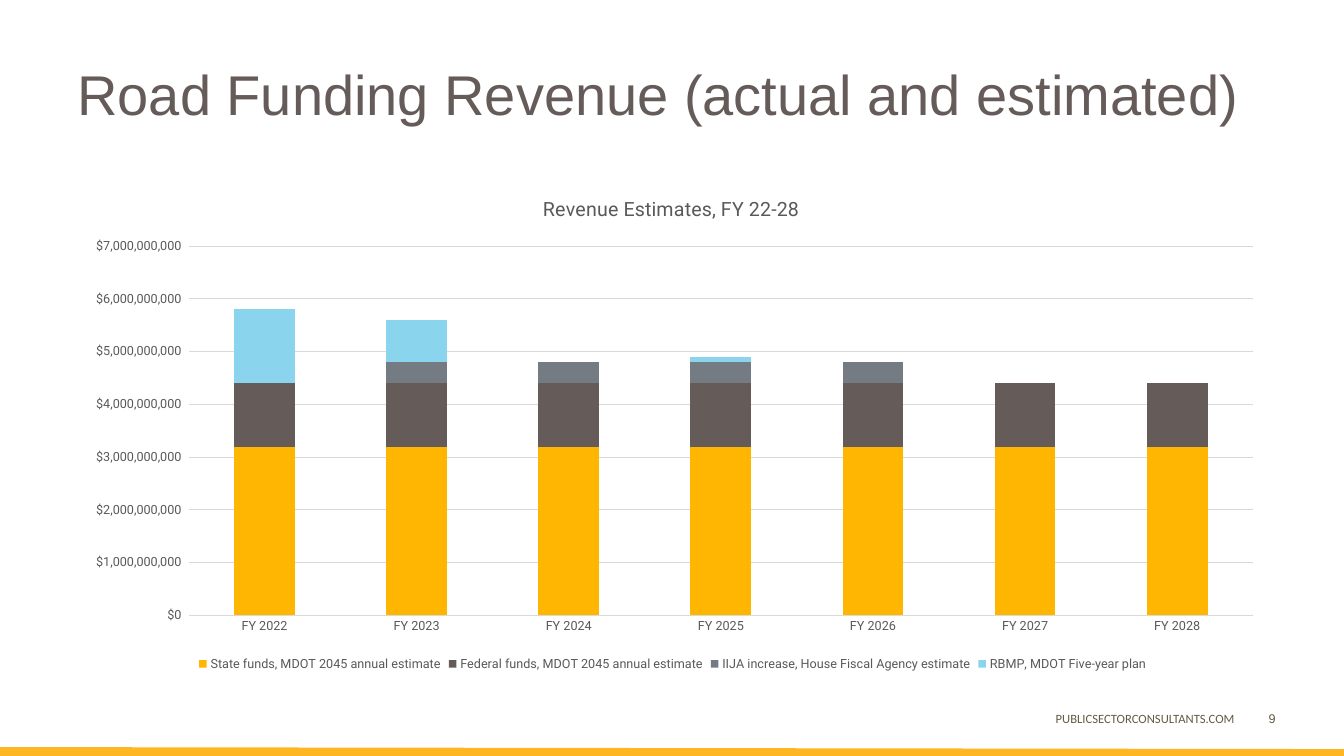
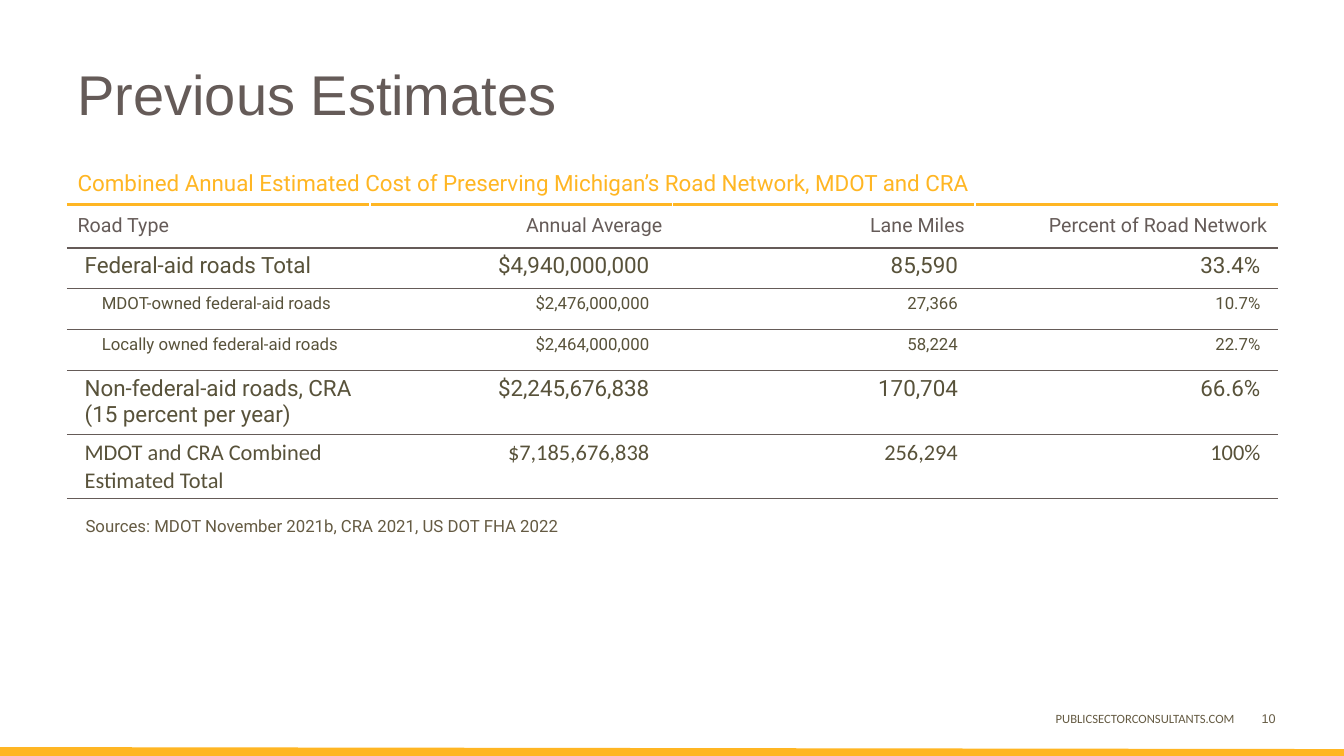
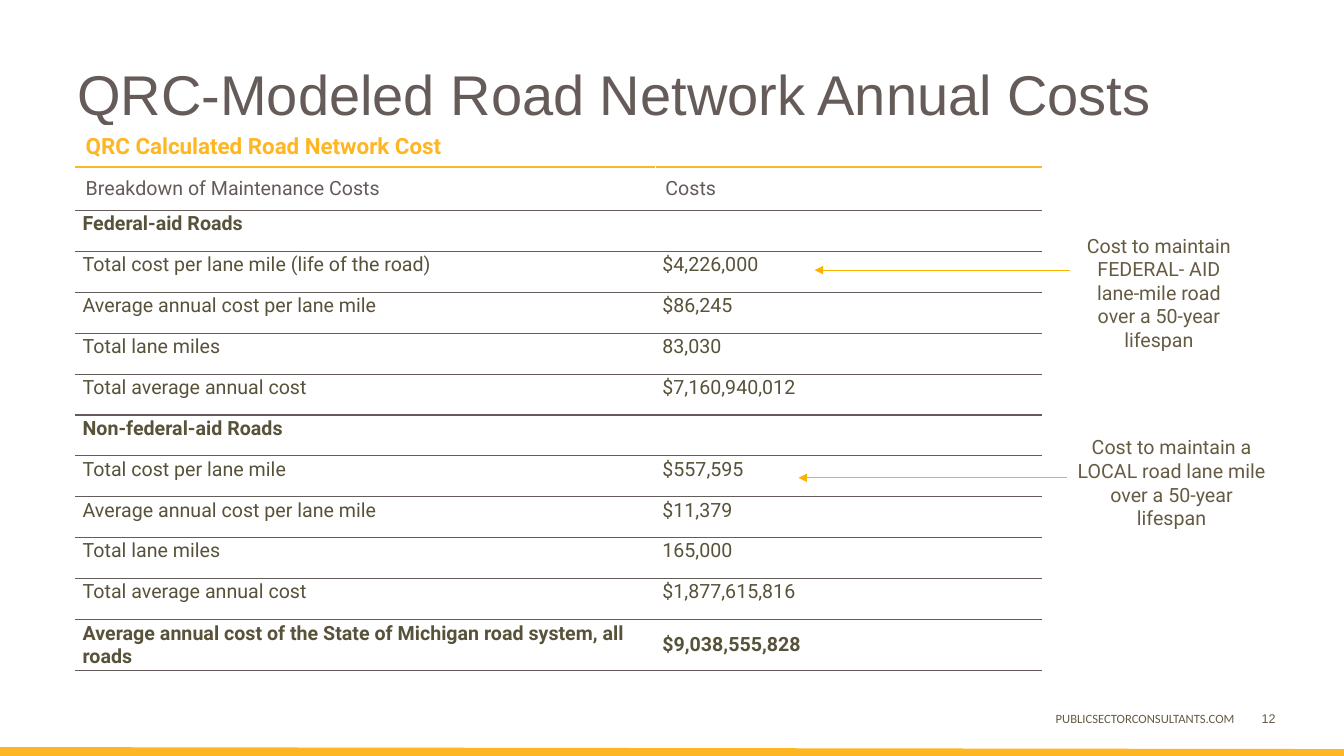
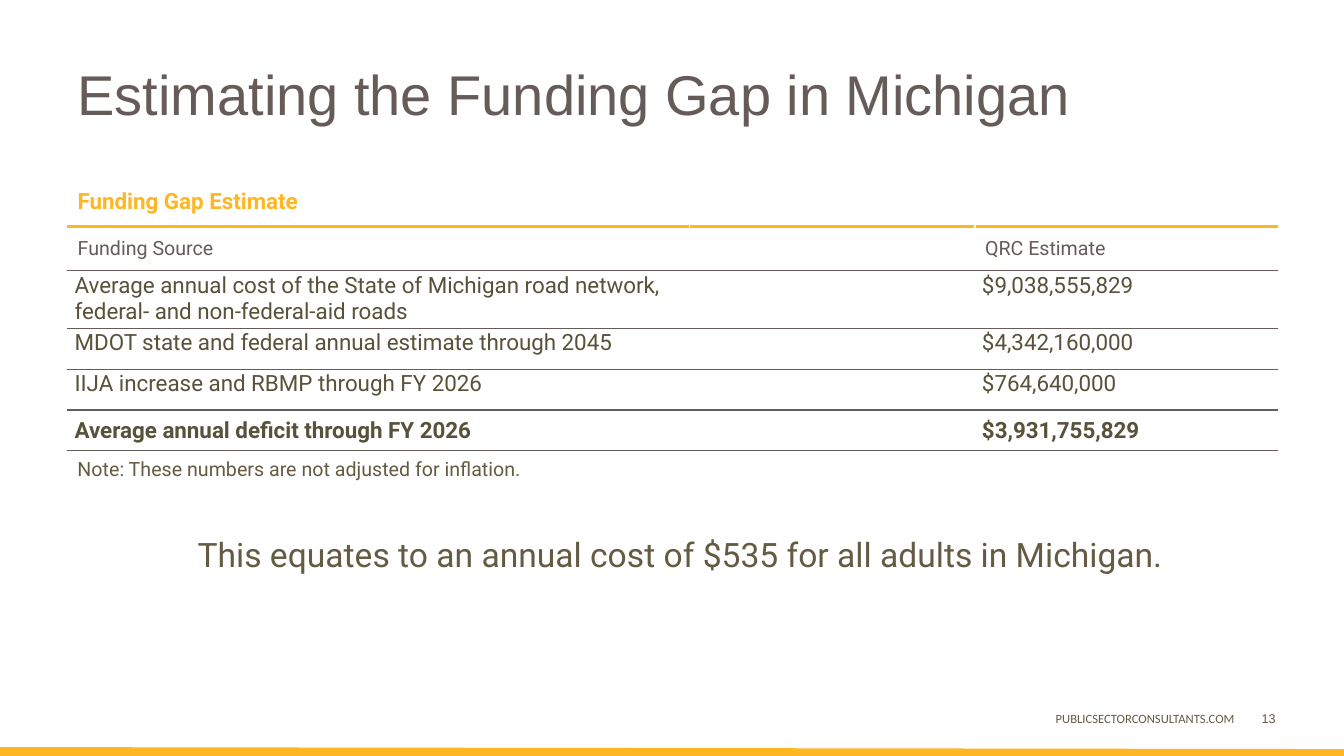
from dataclasses import dataclass

from lxml.etree import SubElement
from pptx import Presentation
from pptx.chart.data import CategoryChartData
from pptx.dml.color import RGBColor
from pptx.enum.chart import XL_CHART_TYPE, XL_LEGEND_POSITION, XL_TICK_MARK
from pptx.enum.shapes import MSO_CONNECTOR
from pptx.enum.text import MSO_ANCHOR, PP_ALIGN
from pptx.oxml.ns import qn
from pptx.util import Inches, Pt


@dataclass(frozen=True)
class Theme:
    gold: str = "FFB623"
    arrow: str = "FBB300"
    gray: str = "655B58"
    olive: str = "655B43"
    body: str = "58523A"
    white: str = "FFFFFF"
    chart_text: str = "595959"
    grid: str = "D9D9D9"
    series: tuple = ("FFB602", "655B58", "757B83", "8BD4EE")
    title_font: str = "Arial"
    text_font: str = "Roboto"
    footer_font: str = "Calibri"
    title: int = 40
    statement: int = 24
    large: int = 16
    normal: int = 14
    small: int = 12
    tiny: int = 9


THEME = Theme()


@dataclass(frozen=True)
class RowStyle:
    size: int = THEME.normal
    bold: bool = False
    font: str = THEME.text_font
    indent: float = 0
    anchor: MSO_ANCHOR = MSO_ANCHOR.TOP


PLAIN = RowStyle()
SECTION = RowStyle(bold=True)
GRAND_TOTAL = RowStyle(bold=True, anchor=MSO_ANCHOR.MIDDLE)
LARGE = RowStyle(size=THEME.large)
LARGE_TOTAL = RowStyle(size=THEME.large, bold=True, anchor=MSO_ANCHOR.MIDDLE)
DETAIL = RowStyle(size=THEME.small, indent=0.17)
COMBINED = RowStyle(size=THEME.large, font=THEME.footer_font)

FOOTER = "PUBLICSECTORCONSULTANTS.COM"
ROW_HEIGHT = 4.87 / 12

REVENUE = {
    "title": "Revenue Estimates, FY 22-28",
    "years": [f"FY {year}" for year in range(2022, 2029)],
    "billions": {
        "State funds, MDOT 2045 annual estimate": [3.2] * 7,
        "Federal funds, MDOT 2045 annual estimate": [1.2] * 7,
        "IIJA increase, House Fiscal Agency estimate": [0, 0.4, 0.4, 0.4, 0.4, 0, 0],
        "RBMP, MDOT Five-year plan": [1.4, 0.8, 0, 0.1, 0, 0, 0],
    },
}

PREVIOUS_ESTIMATES = {
    "caption": "Combined Annual Estimated Cost of Preserving Michigan’s Road Network, MDOT and CRA",
    "caption_bold": False,
    "caption_height": ROW_HEIGHT,
    "position": (0.67, 1.62),
    "columns": [3, 3, 3, 3],
    "margins": (0.17, 0.05),
    "right_padding": {1: 0.06},
    "numbers": PP_ALIGN.RIGHT,
    "header": ["Road Type", "Annual Average", "Lane Miles", "Percent of Road Network"],
    "rows": [
        (LARGE, ["Federal-aid roads Total", "$4,940,000,000", "85,590", "33.4%"]),
        (DETAIL, ["MDOT-owned federal-aid roads", "$2,476,000,000", "27,366", "10.7%"]),
        (DETAIL, ["Locally owned federal-aid roads", "$2,464,000,000", "58,224", "22.7%"]),
        (LARGE, ["Non-federal-aid roads, CRA (15 percent per year)",
                 "$2,245,676,838", "170,704", "66.6%"]),
        (COMBINED, ["MDOT and CRA Combined Estimated Total",
                    "$7,185,676,838", "256,294", "100%"]),
    ],
}

NETWORK_COSTS = {
    "caption": "QRC Calculated Road Network Cost",
    "caption_bold": True,
    "caption_height": ROW_HEIGHT,
    "position": (0.75, 1.25),
    "columns": [5.75, 3.83],
    "margins": (0.07, 0.02),
    "right_padding": {},
    "numbers": PP_ALIGN.LEFT,
    "header": ["Breakdown of Maintenance Costs", "Costs"],
    "rows": [
        (SECTION, ["Federal-aid Roads", ""]),
        (PLAIN, ["Total cost per lane mile (life of the road)", "$4,226,000"]),
        (PLAIN, ["Average annual cost per lane mile", "$86,245"]),
        (PLAIN, ["Total lane miles", "83,030"]),
        (PLAIN, ["Total average annual cost", "$7,160,940,012"]),
        (SECTION, ["Non-federal-aid Roads", ""]),
        (PLAIN, ["Total cost per lane mile", "$557,595"]),
        (PLAIN, ["Average annual cost per lane mile", "$11,379"]),
        (PLAIN, ["Total lane miles", "165,000"]),
        (PLAIN, ["Total average annual cost", "$1,877,615,816"]),
        (GRAND_TOTAL, ["Average annual cost of the State of Michigan road system, all roads",
                       "$9,038,555,828"]),
    ],
}

# text, text box, arrow start, arrow end
CALLOUTS = [
    ("Cost to maintain FEDERAL- AID lane-mile road over a 50-year lifespan",
     (10.58, 2.27, 1.83, 1.28), (10.61, 2.68), (8.08, 2.68)),
    ("Cost to maintain a LOCAL road lane mile over a 50-year lifespan",
     (10.58, 4.27, 2.08, 1.04), (10.58, 4.74), (7.92, 4.74)),
]

FUNDING_GAP = {
    "caption": "Funding Gap Estimate",
    "caption_bold": True,
    "caption_height": 0.5,
    "position": (0.67, 1.75),
    "columns": [6.17, 2.83, 3],
    "margins": (0.07, 0.02),
    "right_padding": {},
    "numbers": PP_ALIGN.LEFT,
    "header": ["Funding Source", "", "QRC Estimate"],
    "rows": [
        (LARGE, ["Average annual cost of the State of Michigan road network, "
                 "federal- and non-federal-aid roads", "", "$9,038,555,829"]),
        (LARGE, ["MDOT state and federal annual estimate through 2045", "", "$4,342,160,000"]),
        (LARGE, ["IIJA increase and RBMP through FY 2026", "", "$764,640,000"]),
        (LARGE_TOTAL, ["Average annual deficit through FY 2026", "", "$3,931,755,829"]),
    ],
}


def rgb(color):
    return RGBColor.from_string(color)


def style_font(font, size, color, name=THEME.text_font, bold=False):
    font.size, font.name, font.bold = Pt(size), name, bold
    font.color.rgb = rgb(color)


def add_text(slide, box, text, size, color=THEME.olive, font=THEME.text_font,
             align=PP_ALIGN.LEFT, anchor=MSO_ANCHOR.TOP):
    frame = slide.shapes.add_textbox(*map(Inches, box)).text_frame
    frame.word_wrap, frame.vertical_anchor = True, anchor
    frame.text = text
    paragraph = frame.paragraphs[0]
    paragraph.alignment = align
    style_font(paragraph.runs[0].font, size, color, font)


def add_line(slide, start, end, color, width, arrow=False):
    connector = slide.shapes.add_connector(
        MSO_CONNECTOR.STRAIGHT, *map(Inches, (*start, *end)))
    connector.line.color.rgb, connector.line.width = rgb(color), Pt(width)
    if arrow:
        SubElement(connector.line._get_or_add_ln(), qn("a:tailEnd"), type="triangle")
    SubElement(connector.element.spPr, qn("a:effectLst"))


def add_base_slide(presentation, title, number):
    """Blank slide with the shared band, footer, title and page number."""
    slide = presentation.slides.add_slide(presentation.slide_layouts[6])
    add_line(slide, (0, 7.46), (13.33, 7.48), THEME.gold, 7)
    add_text(slide, (10.17, 7, 2.17, 0.25), FOOTER, THEME.tiny,
             font=THEME.footer_font, align=PP_ALIGN.RIGHT)
    add_text(slide, (0.67, 0.54, 12, 0.77), title, THEME.title, THEME.gray,
             THEME.title_font, anchor=MSO_ANCHOR.MIDDLE)
    add_text(slide, (12.25, 6.93, 0.5, 0.4), str(number), THEME.tiny,
             font=THEME.title_font, align=PP_ALIGN.RIGHT, anchor=MSO_ANCHOR.MIDDLE)
    return slide


def set_borders(cell, top, bottom):
    """Give a cell white sides and the given (colour, points) above and below."""
    properties = cell._tc.get_or_add_tcPr()
    side = (THEME.white, 1)
    for tag, (color, width) in zip(("lnL", "lnR", "lnT", "lnB"), (side, side, top, bottom)):
        line = SubElement(properties, qn(f"a:{tag}"), w=str(Pt(width)))
        fill = SubElement(line, qn("a:solidFill"))
        SubElement(fill, qn("a:srgbClr"), val=color)


def fill_cell(cell, text, style, color, margins, align=PP_ALIGN.LEFT):
    """Write a cell; margins run left, top, right, bottom."""
    cell.fill.background()
    cell.vertical_anchor = style.anchor
    (cell.margin_left, cell.margin_top,
     cell.margin_right, cell.margin_bottom) = map(Inches, margins)
    paragraph = cell.text_frame.paragraphs[0]
    paragraph.text, paragraph.alignment = text, align
    for run in paragraph.runs:
        style_font(run.font, style.size, color, style.font, style.bold)


def add_cost_table(slide, content):
    columns, rows = content["columns"], content["rows"]
    heights = [content["caption_height"]] + [ROW_HEIGHT] * (len(rows) + 1)
    table = slide.shapes.add_table(
        len(heights), len(columns),
        *map(Inches, (*content["position"], sum(columns), sum(heights)))).table
    table.first_row = table.horz_banding = False
    for column, width in zip(table.columns, columns):
        column.width = Inches(width)
    for row, height in zip(table.rows, heights):
        row.height = Inches(height)

    blank, gold, gray = (THEME.white, 1), (THEME.gold, 2.25), (THEME.gray, 1)
    aligns = [PP_ALIGN.LEFT] + [content["numbers"]] * (len(columns) - 1)
    caption_style = RowStyle(THEME.large, content["caption_bold"], anchor=MSO_ANCHOR.MIDDLE)
    header_style = RowStyle(anchor=MSO_ANCHOR.MIDDLE)
    side, edge = content["margins"]

    for index, (align, heading) in enumerate(zip(aligns, content["header"])):
        caption = table.cell(0, index)
        set_borders(caption, blank, gold)
        fill_cell(caption, "" if index else content["caption"], caption_style,
                  THEME.gold, (0.1, 0.05, 0.1, 0.05))
        header = table.cell(1, index)
        set_borders(header, gold, gray)
        header_edge = 0.1 if heading else 0.05
        fill_cell(header, heading, header_style, THEME.gray,
                  (0.1, header_edge, 0.1, header_edge), align)
        right = side + content["right_padding"].get(index, 0)
        for row_index, (style, texts) in enumerate(rows, start=2):
            cell = table.cell(row_index, index)
            left = side + (0 if index else style.indent)
            set_borders(cell, gray, gray)
            fill_cell(cell, texts[index], style, THEME.body, (left, edge, right, edge), align)
            cell.text_frame.paragraphs[0].space_after = Pt(1)
    table.cell(0, 0).merge(table.cell(0, len(columns) - 1))


def place_chart_part(part, **fractions):
    """Fix a chart part at fractions (x, y, w, h) of the chart area."""
    layout = part.find(qn("c:layout"))
    if layout is None:
        layout = part.makeelement(qn("c:layout"), {})
        part.insert(len(part.findall(qn("c:tx"))), layout)
    manual = SubElement(layout, qn("c:manualLayout"))
    if "w" in fractions:
        SubElement(manual, qn("c:layoutTarget"), val="inner")
    for key in "xy":
        SubElement(manual, qn(f"c:{key}Mode"), val="edge")
    for key, value in fractions.items():
        SubElement(manual, qn(f"c:{key}"), val=str(value))


def add_revenue_chart(slide):
    data = CategoryChartData()
    data.categories = REVENUE["years"]
    for name, billions in REVENUE["billions"].items():
        data.add_series(name, [round(value * 10**9) for value in billions])
    chart = slide.shapes.add_chart(
        XL_CHART_TYPE.COLUMN_STACKED, *map(Inches, (0.67, 1.75, 12, 4.95)), data).chart
    style_font(chart.font, THEME.tiny, THEME.chart_text)

    chart.has_title = True
    title_frame = chart.chart_title.text_frame
    title_frame.text = REVENUE["title"]
    style_font(title_frame.paragraphs[0].runs[0].font, THEME.normal, THEME.chart_text)
    chart.has_legend = True
    chart.legend.position = XL_LEGEND_POSITION.BOTTOM
    chart.legend.include_in_layout = False
    style_font(chart.legend.font, THEME.tiny, THEME.chart_text)

    plot = chart.plots[0]
    plot.gap_width, plot.overlap, plot.vary_by_categories = 150, 100, False
    for series, color in zip(plot.series, THEME.series):
        series.format.fill.solid()
        series.format.fill.fore_color.rgb = rgb(color)

    years, dollars = chart.category_axis, chart.value_axis
    for axis in (years, dollars):
        axis.major_tick_mark = axis.minor_tick_mark = XL_TICK_MARK.NONE
        style_font(axis.tick_labels.font, THEME.tiny, THEME.chart_text)
    dollars.minimum_scale, dollars.maximum_scale, dollars.major_unit = 0, 7 * 10**9, 10**9
    dollars.tick_labels.number_format = '"$"#,##0_);[Red]\\("$"#,##0\\)'
    dollars.tick_labels.number_format_is_linked = False
    dollars.format.line.fill.background()
    for line in (years.format.line, dollars.major_gridlines.format.line):
        line.color.rgb, line.width = rgb(THEME.grid), Pt(0.75)

    place_chart_part(chart.element.find(f".//{qn('c:plotArea')}"), x=0.1, y=0.14, w=0.88, h=0.74)
    place_chart_part(chart.element.find(f".//{qn('c:title')}"), x=0.39, y=0.03)


def main():
    presentation = Presentation()
    presentation.slide_width, presentation.slide_height = Inches(13.33), Inches(7.5)

    slide = add_base_slide(presentation, "Road Funding Revenue (actual and estimated)", 9)
    add_revenue_chart(slide)

    slide = add_base_slide(presentation, "Previous Estimates", 10)
    add_cost_table(slide, PREVIOUS_ESTIMATES)
    add_text(slide, (0.75, 5.07, 6.7, 0.3),
             "Sources: MDOT November 2021b, CRA 2021, US DOT FHA 2022", THEME.small)

    slide = add_base_slide(presentation, "QRC-Modeled Road Network Annual Costs", 12)
    add_cost_table(slide, NETWORK_COSTS)
    for text, box, start, end in CALLOUTS:
        add_text(slide, box, text, THEME.normal, align=PP_ALIGN.CENTER)
        add_line(slide, start, end, THEME.arrow, 0.75, arrow=True)

    slide = add_base_slide(presentation, "Estimating the Funding Gap in Michigan", 13)
    add_cost_table(slide, FUNDING_GAP)
    add_text(slide, (0.67, 4.48, 7.08, 0.34),
             "Note: These numbers are not adjusted for inflation.", THEME.normal)
    add_text(slide, (0.83, 5.25, 11.83, 0.5),
             "This equates to an annual cost of $535 for all adults in Michigan.",
             THEME.statement, align=PP_ALIGN.CENTER)

    presentation.save("out.pptx")


if __name__ == "__main__":
    main()
